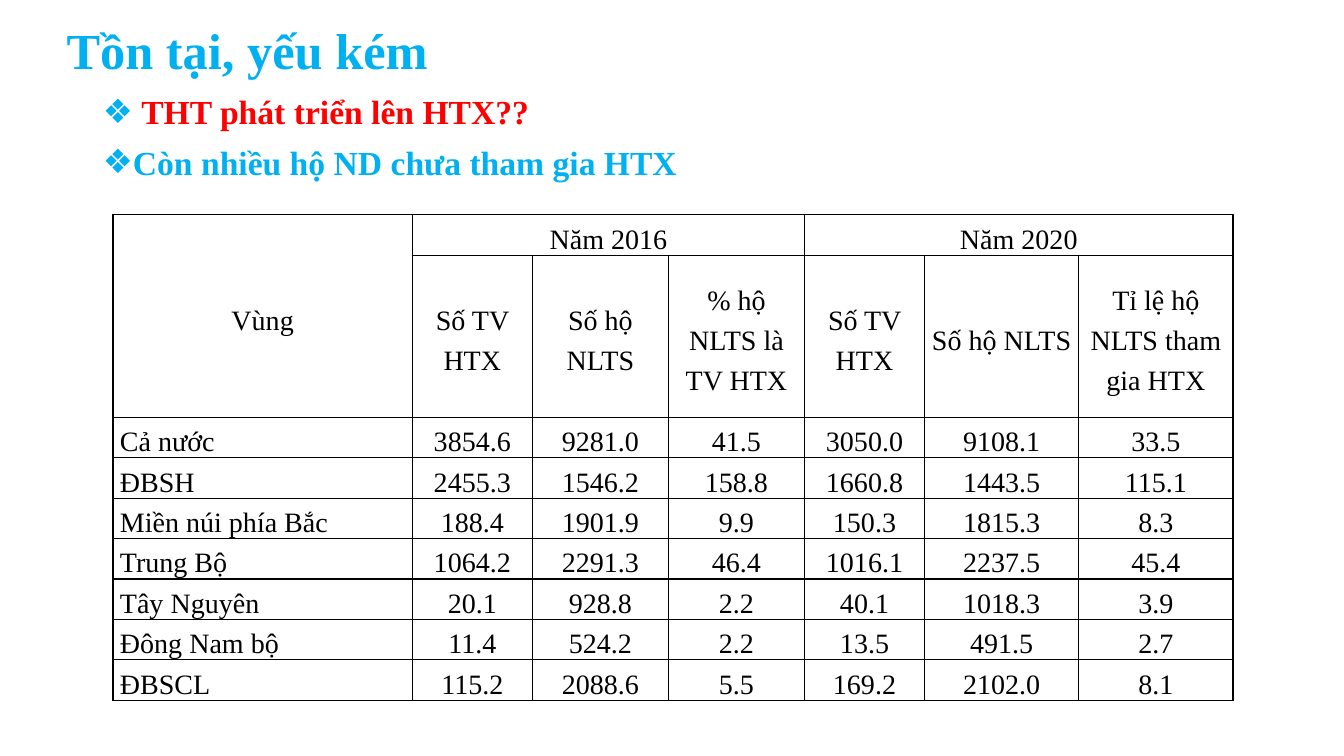
from dataclasses import dataclass
from typing import NamedTuple

from lxml.etree import SubElement
from pptx import Presentation
from pptx.dml.color import RGBColor
from pptx.enum.text import MSO_ANCHOR, MSO_AUTO_SIZE, PP_ALIGN
from pptx.oxml.ns import qn
from pptx.util import Inches, Pt


@dataclass(frozen=True)
class Theme:
    font: str = "Times New Roman"
    accent: str = "00B0F0"
    alert: str = "FF0000"
    ink: str = "000000"
    title_size: int = 36
    bullet_size: int = 24
    table_size: int = 20
    border_width: int = 1


class TextRun(NamedTuple):
    text: str
    color: str
    bold: bool = True


class Region(NamedTuple):
    name: str
    values: str


class HeaderCell(NamedTuple):
    row: int
    col: int
    text: str
    rows: int = 1
    cols: int = 1


THEME = Theme()
BULLETS = [
    [TextRun(" ", THEME.accent, False), TextRun("THT phát triển lên HTX??", THEME.alert)],
    [TextRun("Còn nhiều hộ ND chưa tham gia HTX", THEME.accent)],
]
MEASURES = ["Số TV HTX", "Số hộ NLTS", "% hộ NLTS là TV HTX",
            "Số TV HTX", "Số hộ NLTS", "Tỉ lệ hộ NLTS tham gia HTX"]
HEADERS = [
    HeaderCell(0, 0, "Vùng", rows=2),
    HeaderCell(0, 1, "Năm 2016", cols=3),
    HeaderCell(0, 4, "Năm 2020", cols=3),
    *(HeaderCell(1, col, text) for col, text in enumerate(MEASURES, 1)),
]
REGIONS = [
    Region("Cả nước", "3854.6 9281.0 41.5 3050.0 9108.1 33.5"),
    Region("ĐBSH", "2455.3 1546.2 158.8 1660.8 1443.5 115.1"),
    Region("Miền núi phía Bắc", "188.4 1901.9 9.9 150.3 1815.3 8.3"),
    Region("Trung Bộ", "1064.2 2291.3 46.4 1016.1 2237.5 45.4"),
    Region("Tây Nguyên", "20.1 928.8 2.2 40.1 1018.3 3.9"),
    Region("Đông Nam bộ", "11.4 524.2 2.2 13.5 491.5 2.7"),
    Region("ĐBSCL", "115.2 2088.6 5.5 169.2 2102.0 8.1"),
]
COL_WIDTHS = [2.97, 1.19, 1.35, 1.35, 1.19, 1.53, 1.53]
ROW_HEIGHTS = [0.39, 1.61] + [0.39] * len(REGIONS)


def add_run(p, run: TextRun, size: int) -> None:
    r = p.add_run()
    r.text = run.text
    r.font.name = THEME.font
    r.font.size = Pt(size)
    r.font.bold = run.bold
    r.font.color.rgb = RGBColor.from_string(run.color)


def place(sp, left: float, top: float, width: float, height: float):
    sp.left, sp.top = Inches(left), Inches(top)
    sp.width, sp.height = Inches(width), Inches(height)
    tf = sp.text_frame
    tf.word_wrap = True
    tf.auto_size = MSO_AUTO_SIZE.NONE
    return tf


def add_title(s) -> None:
    tf = place(s.shapes.title, 0.56, 0.11, 11.5, 0.84)
    tf.vertical_anchor = MSO_ANCHOR.MIDDLE
    p = tf.paragraphs[0]
    p.alignment = PP_ALIGN.LEFT
    p.line_spacing = 0.9
    add_run(p, TextRun("Tồn tại, yếu kém", THEME.accent), THEME.title_size)


def add_bullets(s) -> None:
    tf = place(s.placeholders[1], 0.92, 0.9, 11.5, 6.2)
    tf.vertical_anchor = MSO_ANCHOR.TOP
    for i, runs in enumerate(BULLETS):
        p = tf.add_paragraph() if i else tf.paragraphs[0]
        p.line_spacing = 0.9
        p.space_before = Pt(10)
        pPr = p._p.get_or_add_pPr()
        pPr.set("marL", str(Inches(0.25)))
        pPr.set("indent", str(-Inches(0.25)))
        SubElement(pPr, qn("a:buChar"), char="❖")
        for run in runs:
            add_run(p, run, THEME.bullet_size)


def style_cell(cell) -> None:
    tcPr = cell._tc.get_or_add_tcPr()
    for side in ("a:lnL", "a:lnR", "a:lnT", "a:lnB"):
        ln = SubElement(tcPr, qn(side), w=str(Pt(THEME.border_width)))
        SubElement(SubElement(ln, qn("a:solidFill")), qn("a:srgbClr"), val=THEME.ink)
    cell.fill.background()
    cell.margin_left = cell.margin_right = Inches(0.07)
    cell.margin_top = cell.margin_bottom = 0
    cell.vertical_anchor = MSO_ANCHOR.MIDDLE


def write_cell(cell, text: str, align: PP_ALIGN = PP_ALIGN.CENTER) -> None:
    p = cell.text_frame.paragraphs[0]
    p.alignment = align
    p.line_spacing = 1.3
    add_run(p, TextRun(text, THEME.ink, False), THEME.table_size)


def add_region_table(s) -> None:
    table = s.shapes.add_table(len(ROW_HEIGHTS), len(COL_WIDTHS), Inches(1.12), Inches(2.13),
                               Inches(sum(COL_WIDTHS)), Inches(sum(ROW_HEIGHTS))).table
    table.first_row = table.horz_banding = False
    for column, width in zip(table.columns, COL_WIDTHS):
        column.width = Inches(width)
    for row, height in zip(table.rows, ROW_HEIGHTS):
        row.height = Inches(height)
    for cell in table.iter_cells():
        style_cell(cell)

    # Header rows, with the year groups resting on the bottom edge
    for h in HEADERS:
        cell = table.cell(h.row, h.col)
        if h.rows > 1 or h.cols > 1:
            cell.merge(table.cell(h.row + h.rows - 1, h.col + h.cols - 1))
        if h.cols > 1:
            cell.vertical_anchor = MSO_ANCHOR.BOTTOM
        write_cell(cell, h.text)

    # One row per region
    for row, region in enumerate(REGIONS, 2):
        write_cell(table.cell(row, 0), region.name, PP_ALIGN.LEFT)
        for col, value in enumerate(region.values.split(), 1):
            write_cell(table.cell(row, col), value)


def main() -> None:
    prs = Presentation()
    prs.slide_width, prs.slide_height = Inches(13.33), Inches(7.5)
    s = prs.slides.add_slide(prs.slide_layouts[1])
    add_title(s)
    add_bullets(s)
    add_region_table(s)
    prs.save("out.pptx")


if __name__ == "__main__":
    main()
